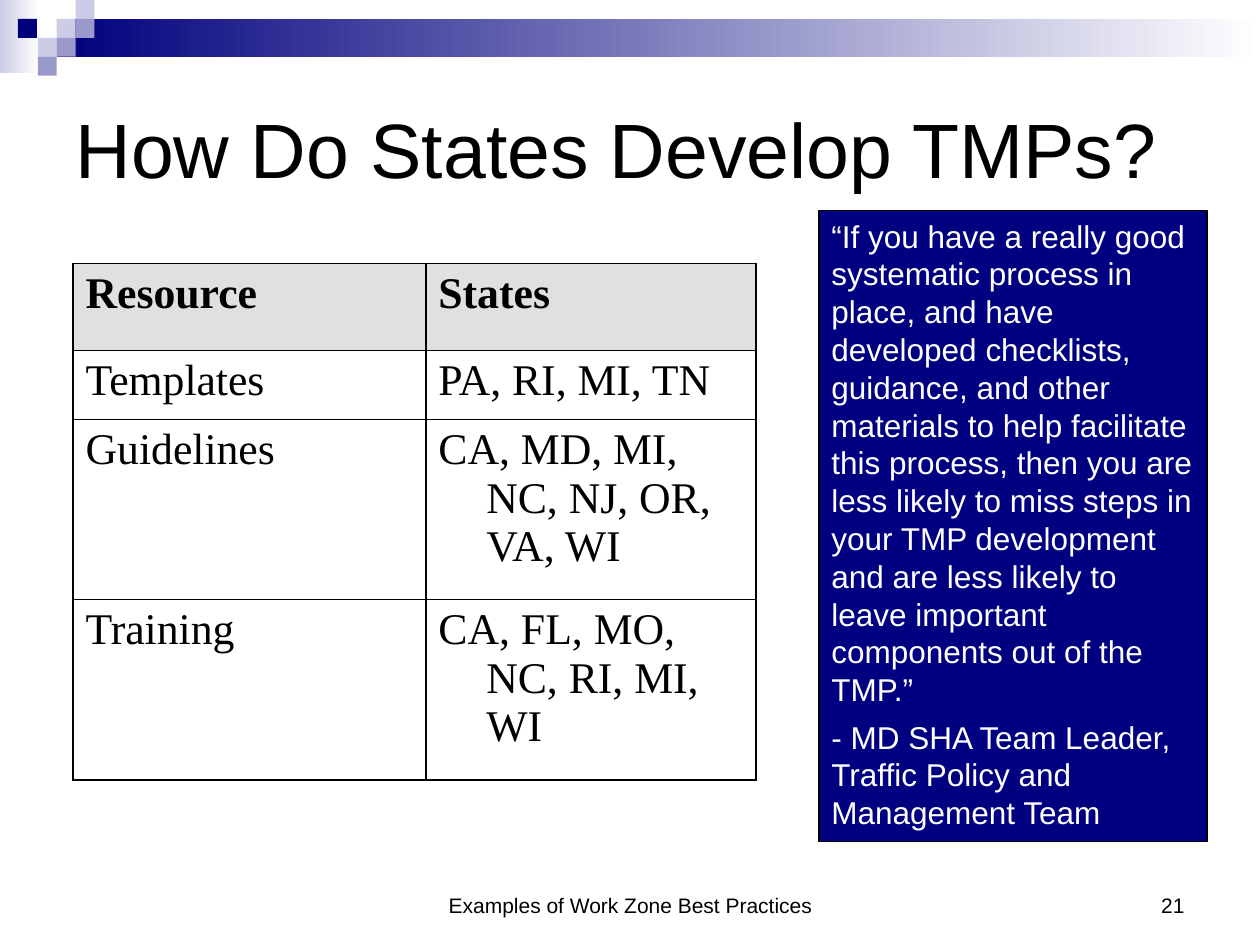
from lxml.etree import SubElement
from pptx import Presentation
from pptx.dml.color import RGBColor
from pptx.enum.shapes import MSO_SHAPE
from pptx.enum.text import MSO_ANCHOR, PP_ALIGN
from pptx.oxml.ns import qn
from pptx.util import Inches, Pt

NAVY = RGBColor(0x00, 0x00, 0x7D)
QUOTE_NAVY = RGBColor(0x00, 0x00, 0x80)
PALE = RGBColor(0xCC, 0xCC, 0xE6)
LILAC = RGBColor(0x99, 0x99, 0xCC)
GREY = RGBColor(0xE0, 0xE0, 0xE0)
WHITE = RGBColor(0xFF, 0xFF, 0xFF)
BLACK = RGBColor(0x00, 0x00, 0x00)

prs = Presentation()
prs.slide_width, prs.slide_height = Inches(10), Inches(7.5)
s = prs.slides.add_slide(prs.slide_layouts[5])
UNIT = 0.15


def add_rect(x, y, w, h, color, fade=False):
    sp = s.shapes.add_shape(MSO_SHAPE.RECTANGLE, Inches(x), Inches(y), Inches(w), Inches(h))
    sp.shadow.inherit = False
    sp.line.fill.background()
    if fade:
        sp.fill.gradient()
        sp.fill.gradient_angle = 0
        for stop, c in zip(sp.fill.gradient_stops, (color, WHITE)):
            stop.color.rgb = c
    else:
        sp.fill.solid()
        sp.fill.fore_color.rgb = color
    return sp


def write(p, text, size, color=BLACK, name="Arial", bold=False, align=PP_ALIGN.LEFT):
    p.alignment = align
    r = p.add_run()
    r.text = text
    for key, value in {"size": Pt(size), "name": name, "bold": bold}.items():
        setattr(r.font, key, value)
    r.font.color.rgb = color


add_rect(0, 0, 0.31, 0.58, PALE, fade=True)
add_rect(3 * UNIT, UNIT, 10 - 3 * UNIT, 2 * UNIT, NAVY, fade=True)
for col, row, color in [(3, 1, PALE), (4, 0, PALE), (4, 1, LILAC), (2, 2, PALE),
                        (0.95, 1, NAVY), (3, 2, LILAC), (2, 3, LILAC)]:
    add_rect(col * UNIT, row * UNIT, UNIT, UNIT, color)

for x, w, text, align in [(3.42, 3.17, "Examples of Work Zone Best Practices", PP_ALIGN.CENTER),
                          (7.17, 2.33, "21", PP_ALIGN.RIGHT)]:
    tf = s.shapes.add_textbox(Inches(x), Inches(6.83), Inches(w), Inches(0.5)).text_frame
    tf.word_wrap = True
    tf.vertical_anchor = MSO_ANCHOR.BOTTOM
    write(tf.paragraphs[0], text, 12, align=align)

title = s.shapes.title
for key, value in {"left": 0.5, "top": 0.42, "width": 9, "height": 1.5}.items():
    setattr(title, key, Inches(value))
title.text_frame.vertical_anchor = MSO_ANCHOR.MIDDLE
write(title.text_frame.paragraphs[0], "How Do States Develop TMPs?", 44)

rows = [("Resource", "States"),
        ("Templates", "PA, RI, MI, TN"),
        ("Guidelines", "CA, MD, MI, NC, NJ, OR, VA, WI"),
        ("Training", "CA, FL, MO, NC, RI, MI, WI")]
table = s.shapes.add_table(len(rows), 2, Inches(0.58), Inches(2.09), Inches(5.42), Inches(4.1)).table
table.first_row = table.horz_banding = False
for column, width in zip(table.columns, (2.8, 2.62)):
    column.width = Inches(width)
for i, (texts, height) in enumerate(zip(rows, (0.69, 0.55, 1.43, 1.43))):
    table.rows[i].height = Inches(height)
    for j, text in enumerate(texts):
        cell = table.cell(i, j)
        p = cell.text_frame.paragraphs[0]
        write(p, text, 25, name="Times New Roman", bold=i == 0)
        pPr = p._p.get_or_add_pPr()
        pPr.set("marL", str(Inches(0.38)))
        pPr.set("indent", str(-Inches(0.38)))
        tcPr = cell._tc.get_or_add_tcPr()
        for side in ("a:lnL", "a:lnR", "a:lnT", "a:lnB"):
            ln = SubElement(tcPr, qn(side), w=str(Pt(1)))
            SubElement(SubElement(ln, qn("a:solidFill")), qn("a:srgbClr"), val=str(BLACK))
        cell.fill.solid()
        cell.fill.fore_color.rgb = WHITE if i else GREY

quote = add_rect(6.5, 1.67, 3.08, 5.01, QUOTE_NAVY)
quote.line.color.rgb = BLACK
quote.line.width = Pt(0.75)
tf = quote.text_frame
tf.word_wrap = True
tf.vertical_anchor = MSO_ANCHOR.TOP
write(tf.paragraphs[0],
      "“If you have a really good systematic process in place, and have developed checklists, "
      "guidance, and other materials to help facilitate this process, then you are less likely "
      "to miss steps in your TMP development and are less likely to leave important components "
      "out of the TMP.”", 18, WHITE)
write(tf.add_paragraph(), "- MD SHA Team Leader, Traffic Policy and Management Team", 18, WHITE)
tf.paragraphs[1].space_before = Pt(5.4)

prs.save("out.pptx")
